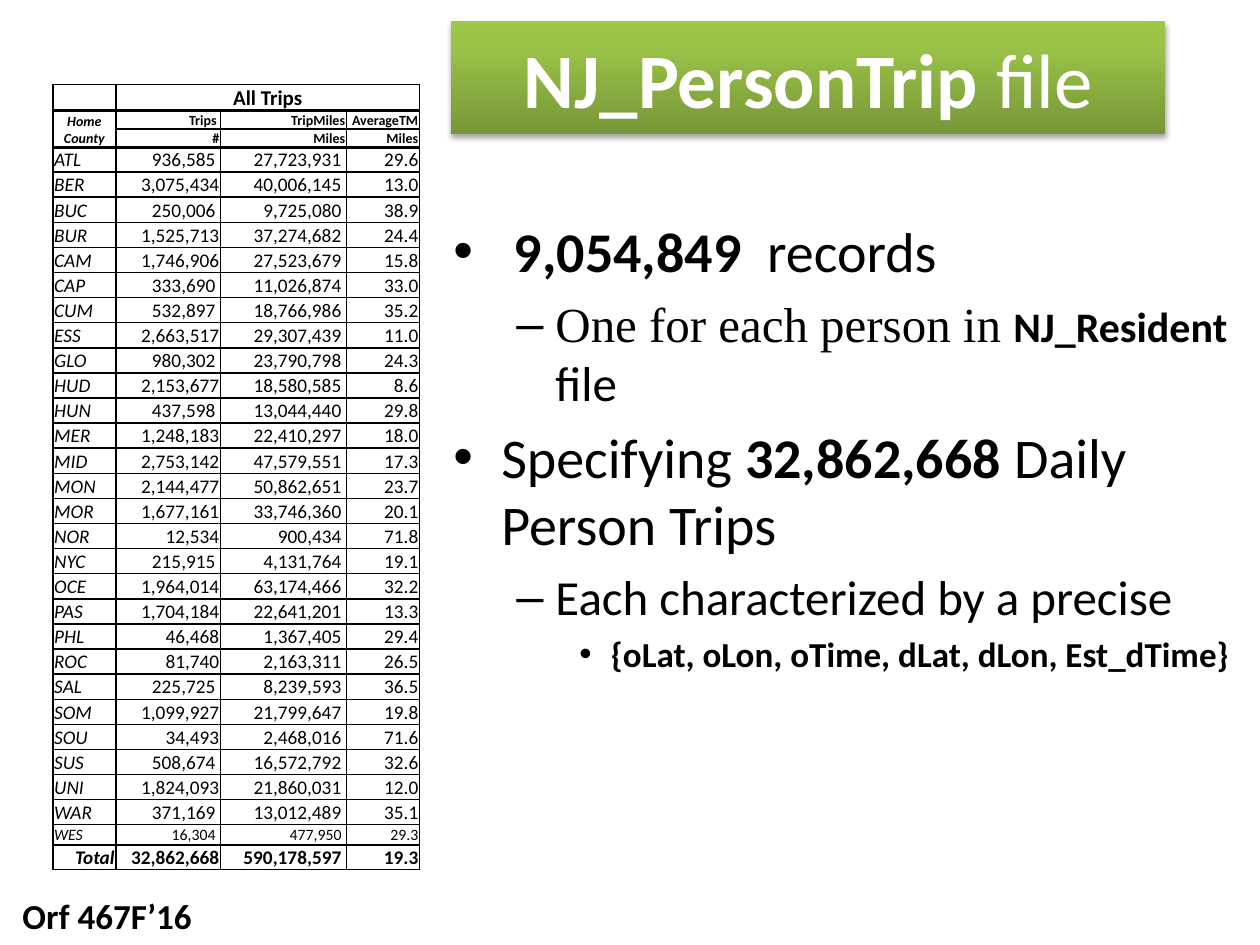
from dataclasses import dataclass

from lxml.etree import SubElement
from pptx import Presentation
from pptx.dml.color import RGBColor as RGB
from pptx.enum.text import MSO_ANCHOR as ANCHOR, MSO_AUTO_SIZE as AUTO, PP_ALIGN as ALIGN
from pptx.oxml import parse_xml
from pptx.oxml.ns import nsdecls, qn
from pptx.util import Inches, Pt

COUNTIES = [
    ("ATL", "936,585", "27,723,931", "29.6"),
    ("BER", "3,075,434", "40,006,145", "13.0"),
    ("BUC", "250,006", "9,725,080", "38.9"),
    ("BUR", "1,525,713", "37,274,682", "24.4"),
    ("CAM", "1,746,906", "27,523,679", "15.8"),
    ("CAP", "333,690", "11,026,874", "33.0"),
    ("CUM", "532,897", "18,766,986", "35.2"),
    ("ESS", "2,663,517", "29,307,439", "11.0"),
    ("GLO", "980,302", "23,790,798", "24.3"),
    ("HUD", "2,153,677", "18,580,585", "8.6"),
    ("HUN", "437,598", "13,044,440", "29.8"),
    ("MER", "1,248,183", "22,410,297", "18.0"),
    ("MID", "2,753,142", "47,579,551", "17.3"),
    ("MON", "2,144,477", "50,862,651", "23.7"),
    ("MOR", "1,677,161", "33,746,360", "20.1"),
    ("NOR", "12,534", "900,434", "71.8"),
    ("NYC", "215,915", "4,131,764", "19.1"),
    ("OCE", "1,964,014", "63,174,466", "32.2"),
    ("PAS", "1,704,184", "22,641,201", "13.3"),
    ("PHL", "46,468", "1,367,405", "29.4"),
    ("ROC", "81,740", "2,163,311", "26.5"),
    ("SAL", "225,725", "8,239,593", "36.5"),
    ("SOM", "1,099,927", "21,799,647", "19.8"),
    ("SOU", "34,493", "2,468,016", "71.6"),
    ("SUS", "508,674", "16,572,792", "32.6"),
    ("UNI", "1,824,093", "21,860,031", "12.0"),
    ("WAR", "371,169", "13,012,489", "35.1"),
    ("WES", "16,304", "477,950", "29.3"),
    ("Total", "32,862,668", "590,178,597", "19.3"),
]
HEADERS = [
    ["", "All Trips", "", ""],
    ["Home County", "Trips", "TripMiles", "AverageTM"],
    ["", "#", "Miles", "Miles"],
]
BULLETS = [
    (0, [(" ", {}), ("9,054,849", {"bold": True}), ("  records", {})]),
    (1, [("One for each person in ", {"font": "Times New Roman"}),
         ("NJ_Resident", {"bold": True, "size": 24}), (" file", {})]),
    (0, [("Specifying ", {}), ("32,862,668", {"bold": True}), (" Daily Person Trips", {})]),
    (1, [("Each characterized by a precise", {})]),
    (2, [("{oLat, oLon, oTime, dLat, dLon, Est_dTime}", {"bold": True})]),
]


@dataclass(frozen=True)
class Theme:
    """Colours, fonts and type sizes of the deck."""
    font: str = "Calibri"
    ink: str = "000000"
    light: str = "FFFFFF"
    greens: tuple = ((0, "779737"), (80, "9BC348"), (100, "9DC746"))
    title: int = 44
    footer: int = 20
    levels: tuple = ((32, "•", 0.38, 0.38), (28, "–", 0.81, 0.31), (20, "•", 1.25, 0.25))
    heading: int = 12
    subheading: int = 8
    data: int = 11
    small: int = 9


THEME = Theme()


def add_text(p, text, size, font=THEME.font, color=THEME.ink, bold=False, italic=False):
    """Add one formatted run to a paragraph."""
    r = p.add_run()
    r.text = text
    f = r.font
    f.name, f.size, f.bold, f.italic = font, Pt(size), bold, italic
    f.color.rgb = RGB.from_string(color)


def set_borders(cell, top, bottom):
    """Draw the four borders of a table cell, widths in points."""
    tc_pr = cell._tc.get_or_add_tcPr()
    for side, width in (("L", 1), ("R", 1), ("T", top), ("B", bottom)):
        ln = SubElement(tc_pr, qn(f"a:ln{side}"), w=str(Pt(width)))
        fill = SubElement(ln, qn("a:solidFill"))
        SubElement(fill, qn("a:srgbClr"), val=THEME.ink)


@dataclass
class SlideBuilder:
    """Place styled elements on the current slide."""
    s: object
    theme: Theme = THEME

    def title(self, box, runs):
        """Format the title placeholder as a green banner."""
        sp = self.s.shapes.title
        sp.left, sp.top, sp.width, sp.height = map(Inches, box)
        stops = "".join(f'<a:gs pos="{pos * 1000}"><a:srgbClr val="{c}"/></a:gs>'
                        for pos, c in self.theme.greens)
        sp_pr = sp._element.spPr
        sp_pr.append(parse_xml(f'<a:prstGeom {nsdecls("a")} prst="rect"><a:avLst/></a:prstGeom>'))
        sp_pr.append(parse_xml(
            f'<a:gradFill {nsdecls("a")} rotWithShape="1"><a:gsLst>{stops}</a:gsLst>'
            '<a:lin ang="16200000" scaled="0"/></a:gradFill>'))
        sp_pr.append(parse_xml(
            f'<a:effectLst {nsdecls("a")}><a:outerShdw blurRad="{Pt(3.1)}" dist="{Pt(1.8)}" '
            f'dir="5400000" rotWithShape="0"><a:srgbClr val="{self.theme.ink}">'
            '<a:alpha val="35000"/></a:srgbClr></a:outerShdw></a:effectLst>'))
        tf = sp.text_frame
        tf.vertical_anchor = ANCHOR.MIDDLE
        p = tf.paragraphs[0]
        p.alignment = ALIGN.CENTER
        for text, bold in runs:
            add_text(p, text, self.theme.title, color=self.theme.light, bold=bold)

    def footer(self, box, text):
        """Add the bold course label."""
        tf = self.s.shapes.add_textbox(*map(Inches, box)).text_frame
        tf.word_wrap = False
        tf.auto_size = AUTO.SHAPE_TO_FIT_TEXT
        add_text(tf.paragraphs[0], text, self.theme.footer, bold=True)

    def bullets(self, box, items):
        """Add a bulleted list of (level, runs)."""
        tf = self.s.shapes.add_textbox(*map(Inches, box)).text_frame
        tf.word_wrap = True
        for i, (level, runs) in enumerate(items):
            p = tf.add_paragraph() if i else tf.paragraphs[0]
            size, mark, margin, hang = self.theme.levels[level]
            p.level = level
            p_pr = p._p.get_or_add_pPr()
            p_pr.set("marL", str(Inches(margin)))
            p_pr.set("indent", str(-Inches(hang)))
            SubElement(p_pr, qn("a:buFont"), typeface="Arial")
            SubElement(p_pr, qn("a:buChar"), char=mark)
            if i:
                p.space_before = Pt(size * 0.2)
            for text, fmt in runs:
                add_text(p, text, **{"size": size, **fmt})

    def cell(self, cell, text, align, anchor, size, gap=0.01, top=1, bottom=1, **fmt):
        """Fill and frame one table cell."""
        cell.margin_left = cell.margin_top = Inches(0.01)
        cell.margin_right, cell.margin_bottom = Inches(gap), 0
        cell.vertical_anchor = anchor
        set_borders(cell, top, bottom)
        cell.fill.background()
        p = cell.text_frame.paragraphs[0]
        p.alignment = align
        if text:
            add_text(p, text, size, **fmt)
        else:
            SubElement(p._p, qn("a:endParaRPr"), sz=str(size * 100))

    def trip_table(self, box, widths, heights, headers, rows):
        """Add the county trip table under its three header rows."""
        th = self.theme
        count = len(headers) + len(rows)
        table = self.s.shapes.add_table(count, len(widths), *map(Inches, box)).table
        table.first_row = table.horz_banding = False
        for col, width in zip(table.columns, widths):
            col.width = Inches(width)
        for row, height in zip(table.rows, heights):
            row.height = Inches(height)
        for i, row in enumerate(headers):
            for j, text in enumerate(row):
                centred = i == 0 or j == 0
                self.cell(table.cell(i, j), text, ALIGN.CENTER if centred else ALIGN.RIGHT,
                          ANCHOR.BOTTOM, th.subheading if i else th.heading,
                          top=2 if i == 1 else 1, bottom=2 if i != 1 or j == 0 else 1,
                          gap=0.03 if text == "Trips" else 0.01, bold=True, italic=j == 0)
        for i, row in enumerate(rows, len(headers)):
            total, small = row[0] == "Total", row[0] == "WES"
            for j, text in enumerate(row):
                spaced = j == 2 or (j == 1 and (small or len(text) == 7))
                self.cell(table.cell(i, j), text, ALIGN.RIGHT if j or total else ALIGN.LEFT,
                          ANCHOR.MIDDLE, th.small if small else th.data,
                          top=2 if i == len(headers) else 1,
                          gap=0.04 if spaced else 0.01, bold=total, italic=j == 0)
        table.cell(0, 1).merge(table.cell(0, 3))
        table.cell(1, 0).merge(table.cell(2, 0))


def main():
    """Build the trip file slide."""
    prs = Presentation()
    prs.slide_width, prs.slide_height = Inches(10), Inches(7.5)
    slide = SlideBuilder(prs.slides.add_slide(prs.slide_layouts[5]))
    head, tail, height = [0.21, 0.14, 0.14], [0.16, 0.19], 6.22
    body = len(COUNTIES) - len(tail)
    heights = head + [(height - sum(head + tail)) / body] * body + tail
    slide.footer((0.08, 7.05, 1.58, 0.44), "Orf 467F’16")
    slide.title((3.58, 0.17, 5.67, 0.89), [("NJ_PersonTrip", True), (" file", False)])
    slide.bullets((3.5, 1.67, 6.42, 4.92), BULLETS)
    slide.trip_table((0.42, 0.67, 2.92, height), (0.5, 0.83, 1, 0.58), heights, HEADERS, COUNTIES)
    prs.save("out.pptx")


if __name__ == "__main__":
    main()
